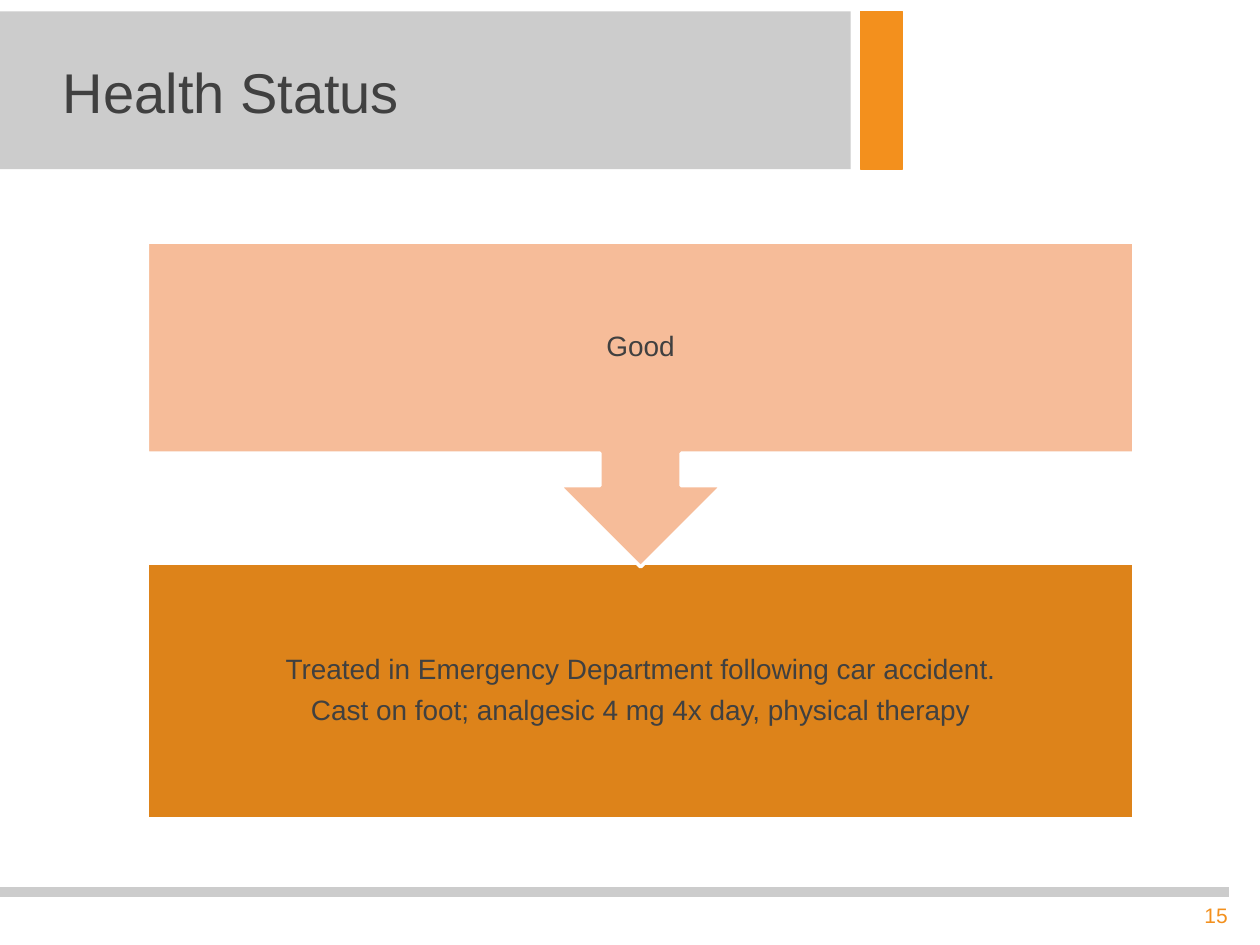
"""Build the Health Status slide."""
from dataclasses import dataclass
from typing import Optional

from lxml.etree import SubElement
from pptx import Presentation
from pptx.dml.color import RGBColor as Rgb
from pptx.enum.shapes import MSO_CONNECTOR as Connector, MSO_SHAPE as Preset
from pptx.enum.text import MSO_ANCHOR as Anchor, PP_ALIGN as Align
from pptx.oxml.ns import qn
from pptx.util import Cm, Pt


@dataclass(frozen=True)
class Theme:
    """Colours and type sizes of the slide."""
    font: str = "Arial"
    ink: Rgb = Rgb(0x40, 0x40, 0x40)
    grey: Rgb = Rgb(0xCC, 0xCC, 0xCC)
    accent: Rgb = Rgb(0xF3, 0x90, 0x1D)
    peach: Rgb = Rgb(0xF6, 0xBC, 0x99)
    amber: Rgb = Rgb(0xDD, 0x83, 0x1A)
    white: Rgb = Rgb(0xFF, 0xFF, 0xFF)
    title_size: float = 32
    step_size: float = 16
    number_size: float = 12


THEME = Theme()


@dataclass(frozen=True)
class Panel:
    """A filled shape with its place in centimetres."""
    place: tuple[float, float, float, float]
    fill: Rgb
    preset: Preset = Preset.RECTANGLE
    outline: Optional[Rgb] = None
    outline_width: float = 0.75


@dataclass(frozen=True)
class Wording:
    """Text with its type and paragraph settings."""
    text: str
    size: float
    color: Rgb
    align: Align
    insets: tuple[float, float, float, float]
    anchor: Anchor = Anchor.MIDDLE
    line_spacing: Optional[float] = None
    space_after: float = 0


def draw_panel(slide, panel: Panel):
    """Draw a panel and return its shape."""
    shape = slide.shapes.add_shape(panel.preset, *map(Cm, panel.place))
    shape.shadow.inherit = False
    shape.fill.solid()
    shape.fill.fore_color.rgb = panel.fill
    if panel.outline is None:
        shape.line.fill.background()
    else:
        shape.line.color.rgb = panel.outline
        shape.line.width = Pt(panel.outline_width)
    return shape


def write(shape, wording: Wording) -> None:
    """Fill a shape with text and format its runs."""
    frame = shape.text_frame
    frame.text = wording.text
    frame.word_wrap = True
    frame.vertical_anchor = wording.anchor
    (frame.margin_left, frame.margin_top,
     frame.margin_right, frame.margin_bottom) = map(Cm, wording.insets)
    for paragraph in frame.paragraphs:
        paragraph.alignment = wording.align
        paragraph.line_spacing = wording.line_spacing
        paragraph.space_after = Pt(wording.space_after)
        for run in paragraph.runs:
            run.font.name = THEME.font
            run.font.size = Pt(wording.size)
            run.font.color.rgb = wording.color


def draw_footer(slide, number: str) -> None:
    """Draw the footer rule and the slide number."""
    rule = slide.shapes.add_connector(
        Connector.STRAIGHT, Cm(0), Cm(17.98), Cm(24.77), Cm(17.98))
    rule.line.color.rgb = THEME.grey
    rule.line.width = Pt(6)
    SubElement(rule._element.spPr, qn("a:effectLst"))
    number_box = slide.shapes.add_textbox(Cm(20.12), Cm(18.06), Cm(4.88), Cm(0.76))
    write(number_box, Wording(number, THEME.number_size, THEME.accent, Align.RIGHT,
                              (0.25, 0.13, 0.25, 0.13), Anchor.TOP))


def draw_header(slide, title: str) -> None:
    """Draw the title band and the accent block beside it."""
    top, height = 0.23, 3.18
    draw_panel(slide, Panel((17.35, top, 0.84, height), THEME.accent,
                            outline=THEME.accent))
    band = draw_panel(slide, Panel((0, top, 17.15, height), THEME.grey))
    write(band, Wording(title, THEME.title_size, THEME.ink, Align.LEFT,
                        (1.27, 0.25, 0.25, 0.13), line_spacing=Pt(36)))


def draw_step(slide, preset: Preset, top: float, height: float,
              fill: Rgb, text: str) -> None:
    """Draw one step of the health history."""
    step = draw_panel(slide, Panel((2.97, top, 19.89, height), fill, preset,
                                   THEME.white, 2))
    write(step, Wording(text, THEME.step_size, THEME.ink, Align.CENTER,
                        (0.3, 0.3, 0.3, 0.3), line_spacing=0.9, space_after=6.3))


def main() -> None:
    """Build and save the slide."""
    deck = Presentation()
    deck.slide_width, deck.slide_height = Cm(25.4), Cm(19.05)
    slide = deck.slides.add_slide(deck.slide_layouts[6])
    draw_footer(slide, "15")
    draw_header(slide, "Health Status")
    draw_step(slide, Preset.RECTANGLE, 11.35, 5.16, THEME.amber,
              "Treated in Emergency Department following car accident.\n"
              "Cast on foot; analgesic 4 mg 4x day, physical therapy")
    draw_step(slide, Preset.DOWN_ARROW_CALLOUT, 4.88, 6.55, THEME.peach, "Good")
    deck.save("out.pptx")


if __name__ == "__main__":
    main()
